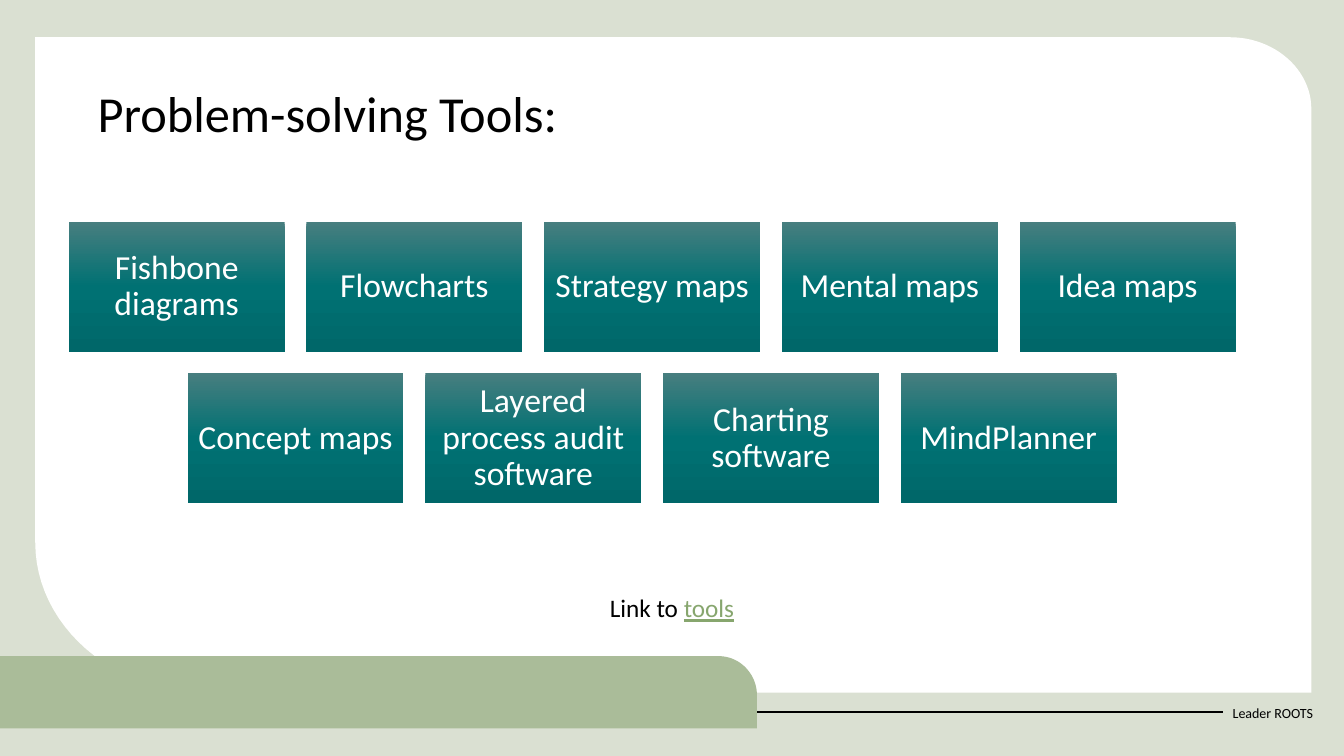
from copy import deepcopy
from dataclasses import dataclass

from lxml import etree
from pptx import Presentation
from pptx.dml.color import RGBColor
from pptx.enum.shapes import MSO_CONNECTOR, MSO_SHAPE
from pptx.enum.text import MSO_ANCHOR, PP_ALIGN
from pptx.oxml.ns import qn
from pptx.shapes.autoshape import Shape
from pptx.slide import Slide
from pptx.text.text import TextFrame
from pptx.util import Pt

LEFT, CENTER = PP_ALIGN.LEFT, PP_ALIGN.CENTER
TOP, MIDDLE = MSO_ANCHOR.TOP, MSO_ANCHOR.MIDDLE
RECTANGLE = MSO_SHAPE.RECTANGLE
STRAIGHT = MSO_CONNECTOR.STRAIGHT

BLACK = RGBColor(0x00, 0x00, 0x00)
WHITE = RGBColor(0xFF, 0xFF, 0xFF)
PALE_GREEN = RGBColor(0xDA, 0xE0, 0xD2)
SAGE = RGBColor(0xAA, 0xBC, 0x99)
LINK_GREEN = RGBColor(0x87, 0xA6, 0x6E)
TILE_GRADIENT = (
    (0, RGBColor(0x47, 0x7E, 0x7F)),
    (0.5, RGBColor(0x00, 0x71, 0x73)),
    (1, RGBColor(0x00, 0x67, 0x69)),
)

FONT = "Calibri"
SLIDE_WIDTH, SLIDE_HEIGHT = 960, 540
TILE_WIDTH, TILE_HEIGHT, TILE_GAP = 154.3, 92.6, 15.5
GRID_CENTER, GRID_TOP = 465.8, 158.6
CURVE_STEPS = 24
ROUNDNESS = 0.55

Point = tuple[float, float]


@dataclass(frozen=True)
class Label:
    left: float
    top: float
    width: float
    height: float
    segments: tuple[tuple[str, RGBColor], ...]
    size: float
    alignment: PP_ALIGN = LEFT
    anchor: MSO_ANCHOR = TOP
    line_spacing: float = 1.0


TOOL_ROWS = (
    ("Fishbone diagrams", "Flowcharts", "Strategy maps", "Mental maps", "Idea maps"),
    ("Concept maps", "Layered process audit software", "Charting software", "MindPlanner"),
)
LABELS = (
    Label(873.4, 494.6, 72.7, 28.8, (("Leader ROOTS", BLACK),), 10, anchor=MIDDLE),
    Label(62.6, 59.8, 834.5, 63.4, (("Problem-solving Tools:", BLACK),), 36, line_spacing=0.9),
    Label(240, 415.4, 480, 31.7, (("Link to ", BLACK), ("tools", LINK_GREEN)), 18, CENTER,
          line_spacing=1.2),
)


def rounded_corner(start: Point, corner: Point, end: Point) -> list[Point]:
    first, second = (
        tuple(a + ROUNDNESS * (b - a) for a, b in zip(side, corner)) for side in (start, end)
    )
    points = []
    for step in range(CURVE_STEPS + 1):
        t = step / CURVE_STEPS
        weights = ((1 - t) ** 3, 3 * t * (1 - t) ** 2, 3 * t * t * (1 - t), t ** 3)
        x, y = (
            sum(weight * value for weight, value in zip(weights, axis))
            for axis in zip(start, first, second, end)
        )
        points.append((x, y))
    return points


def style_shape(shape: Shape, color: RGBColor) -> None:
    shape.shadow.inherit = False
    shape.fill.solid()
    shape.fill.fore_color.rgb = color
    shape.line.fill.background()


def add_outline(slide: Slide, points: list[Point], color: RGBColor) -> None:
    vertices = [(Pt(x), Pt(y)) for x, y in points]
    builder = slide.shapes.build_freeform(*vertices[0])
    builder.add_line_segments(vertices[1:], close=True)
    style_shape(builder.convert_to_shape(), color)


def write_text(text_frame: TextFrame, label: Label) -> None:
    text_frame.word_wrap = True
    text_frame.vertical_anchor = label.anchor
    paragraph = text_frame.paragraphs[0]
    paragraph.alignment = label.alignment
    paragraph.line_spacing = label.line_spacing
    for text, color in label.segments:
        run = paragraph.add_run()
        run.text = text
        run.font.name = FONT
        run.font.size = Pt(label.size)
        run.font.color.rgb = color
        if color == LINK_GREEN:
            run.font.underline = True


def add_label(slide: Slide, label: Label) -> None:
    box = slide.shapes.add_textbox(
        Pt(label.left), Pt(label.top), Pt(label.width), Pt(label.height)
    )
    write_text(box.text_frame, label)


def fill_with_gradient(shape: Shape) -> None:
    shape.fill.gradient()
    shape.fill.gradient_angle = 270
    stop_list = shape._element.spPr.find(qn("a:gradFill")).find(qn("a:gsLst"))
    stop_list.append(deepcopy(stop_list[-1]))
    for stop, (position, color) in zip(shape.fill.gradient_stops, TILE_GRADIENT):
        stop.position = position
        stop.color.rgb = color


def add_tile(slide: Slide, left: float, top: float, name: str) -> None:
    label = Label(left, top, TILE_WIDTH, TILE_HEIGHT, ((name, WHITE),), 24, CENTER, MIDDLE, 0.9)
    tile = slide.shapes.add_shape(
        RECTANGLE, Pt(left), Pt(top), Pt(TILE_WIDTH), Pt(TILE_HEIGHT)
    )
    tile.shadow.inherit = False
    tile.line.fill.background()
    fill_with_gradient(tile)
    text_frame = tile.text_frame
    text_frame.margin_left = text_frame.margin_right = Pt(7.2)
    text_frame.margin_top = text_frame.margin_bottom = Pt(7.2)
    write_text(text_frame, label)


def add_tool_grid(slide: Slide) -> None:
    for row, names in enumerate(TOOL_ROWS):
        row_width = len(names) * (TILE_WIDTH + TILE_GAP) - TILE_GAP
        top = GRID_TOP + row * (TILE_HEIGHT + TILE_GAP)
        for column, name in enumerate(names):
            left = GRID_CENTER - row_width / 2 + column * (TILE_WIDTH + TILE_GAP)
            add_tile(slide, left, top, name)


def add_frame(slide: Slide) -> None:
    backdrop = slide.shapes.add_shape(RECTANGLE, 0, 0, Pt(SLIDE_WIDTH), Pt(SLIDE_HEIGHT))
    style_shape(backdrop, PALE_GREEN)
    panel = [
        (25.2, 26.6),
        *rounded_corner((878.4, 26.6), (936.7, 26.6), (936.7, 77.8)),
        (936.7, 494.8),
        *rounded_corner((147.6, 494.8), (25.2, 494.8), (25.2, 387.4)),
    ]
    add_outline(slide, panel, WHITE)
    footer_line = slide.shapes.add_connector(STRAIGHT, 0, Pt(508.7), Pt(873.4), Pt(508.7))
    footer_line.line.color.rgb = BLACK
    footer_line.line.width = Pt(1.5)
    etree.SubElement(footer_line._element.spPr, qn("a:effectLst"))
    tab = [
        (0, 520.3),
        (0, 468.7),
        *rounded_corner((513.4, 468.7), (540.7, 468.7), (540.7, 496.8)),
        (540.7, 520.3),
    ]
    add_outline(slide, tab, SAGE)


def main() -> None:
    presentation = Presentation()
    presentation.slide_width = Pt(SLIDE_WIDTH)
    presentation.slide_height = Pt(SLIDE_HEIGHT)
    slide = presentation.slides.add_slide(presentation.slide_layouts[6])
    add_frame(slide)
    add_tool_grid(slide)
    for label in LABELS:
        add_label(slide, label)
    presentation.save("out.pptx")


if __name__ == "__main__":
    main()
